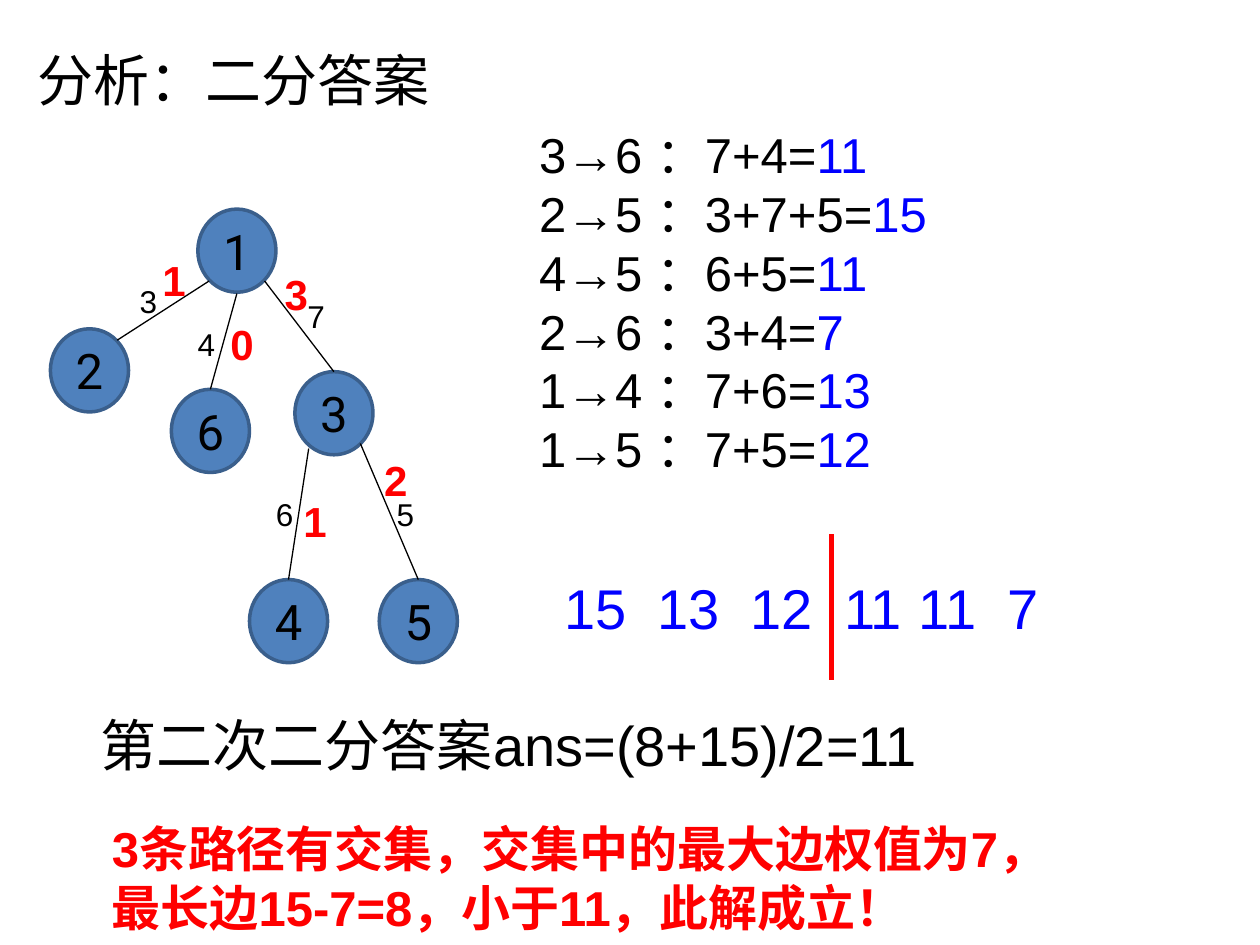
from dataclasses import dataclass
from lxml.etree import SubElement
from pptx import Presentation
from pptx.dml.color import RGBColor
from pptx.enum.shapes import MSO_CONNECTOR, MSO_SHAPE
from pptx.enum.text import MSO_ANCHOR, MSO_AUTO_SIZE, PP_ALIGN
from pptx.oxml.ns import qn
from pptx.util import Pt

SCALE = 9144


def emu(*sizes):
    return [size * SCALE for size in sizes]


@dataclass(frozen=True)
class Theme:
    font: str = "Arial"
    round_font: str = "Roboto"
    black: str = "000000"
    red: str = "FF0000"
    blue: str = "0000FF"
    fill: str = "4F81BD"
    edge: str = "3A5F8C"
    title: int = 32
    body: int = 28
    count: int = 24
    small: int = 18


class Board:
    def __init__(self, slide, theme):
        self.slide = slide
        self.theme = theme

    def style(self, run, size, color, bold=False, font=None):
        run.font.name = font or self.theme.font
        run.font.size = Pt(size)
        run.font.bold = bold
        run.font.color.rgb = RGBColor.from_string(color)

    def node(self, name, left, top):
        shape = self.slide.shapes.add_shape(
            MSO_SHAPE.OVAL, *emu(left, top, 62, 66))
        shape.shadow.inherit = False
        shape.fill.solid()
        shape.fill.fore_color.rgb = RGBColor.from_string(self.theme.fill)
        shape.line.color.rgb = RGBColor.from_string(self.theme.edge)
        shape.line.width = Pt(2)
        frame = shape.text_frame
        frame.text = name
        frame.vertical_anchor = MSO_ANCHOR.MIDDLE
        para = frame.paragraphs[0]
        para.alignment = PP_ALIGN.CENTER
        self.style(para.runs[0], self.theme.body, self.theme.black,
                   font=self.theme.round_font)
        return shape

    def line(self, start, end, color, width, node=None):
        link = self.slide.shapes.add_connector(
            MSO_CONNECTOR.STRAIGHT, *emu(*start, *end))
        link.line.color.rgb = RGBColor.from_string(color)
        link.line.width = Pt(width)
        SubElement(link._element.spPr, qn("a:effectLst"))
        if node is not None:
            link.end_connect(node, 0)

    def box(self, left, top, width, height):
        frame = self.slide.shapes.add_textbox(
            *emu(left, top, width, height)).text_frame
        frame.word_wrap = True
        frame.auto_size = MSO_AUTO_SIZE.SHAPE_TO_FIT_TEXT
        return frame

    def text(self, words, area, size, color, bold=False):
        frame = self.box(*area)
        frame.text = words
        para = frame.paragraphs[0]
        self.style(para.runs[0], size, color, bold)
        return para

    def sums(self, rows, area):
        frame = self.box(*area)
        for index, (head, total) in enumerate(rows):
            para = frame.add_paragraph() if index else frame.paragraphs[0]
            para.text = head
            para.add_run().text = total
            for run, color in zip(para.runs, (self.theme.black, self.theme.blue)):
                self.style(run, self.theme.body, color)

    def series(self, items, stops, area):
        para = self.text("\t".join(items), area, self.theme.title, self.theme.blue)
        tabs = SubElement(para._p.get_or_add_pPr(), qn("a:tabLst"))
        for stop in stops:
            SubElement(tabs, qn("a:tab"), pos=str(stop * SCALE), algn="l")


NODES = {
    "1": (157, 166), "2": (40, 261), "6": (136, 309),
    "3": (234, 295), "4": (198, 460), "5": (301, 460),
}
EDGES = [
    ((166, 223), (93, 270), None),
    ((188, 233), (167, 309), "6"),
    ((210, 223), (265, 295), "3"),
    ((245, 356), (229, 460), "4"),
    ((286, 352), (332, 460), "5"),
]
COSTS = [("3", 101, 219), ("4", 147, 253), ("7", 234, 231),
         ("6", 209, 388), ("5", 305, 388)]
COUNTS = [("1", 119, 197), ("0", 173, 248), ("3", 216, 208),
          ("2", 295, 356), ("1", 231, 388)]
SUMS = [("3→6 ：7+4=", "11"), ("2→5 ：3+7+5=", "15"), ("4→5 ：6+5=", "11"),
        ("2→6 ：3+4=", "7"), ("1→4 ：7+6=", "13"), ("1→5 ：7+5=", "12")]


def main():
    deck = Presentation()
    deck.slide_width, deck.slide_height = emu(1000, 750)
    theme = Theme()
    board = Board(deck.slides.add_slide(deck.slide_layouts[6]), theme)

    nodes = {name: board.node(name, *spot) for name, spot in NODES.items()}
    for start, end, name in EDGES:
        board.line(start, end, theme.black, 0.75, nodes.get(name))
    for cost, left, top in COSTS:
        board.text(cost, (left, top, 41, 40), theme.small, theme.black)
    for count, left, top in COUNTS:
        board.text(count, (left, top, 41, 50), theme.count, theme.red, True)

    board.sums(SUMS, (418, 94, 328, 290))
    board.text("分析：二分答案", (20, 31, 747, 63), theme.title, theme.black)
    board.series(["15", "13", "12", "11", "11", "7"],
                 [74, 148, 222, 281, 352], (438, 450, 512, 63))
    board.text("第二次二分答案ans=(8+15)/2=11", (70, 559, 830, 63),
               theme.title, theme.black)
    board.line((660, 424), (660, 540), theme.red, 3)
    board.text("3条路径有交集，交集中的最大边权值为7，最长边15-7=8，小于11，此解成立！",
               (79, 645, 797, 103), theme.body, theme.red, True)
    deck.save("out.pptx")


if __name__ == "__main__":
    main()
